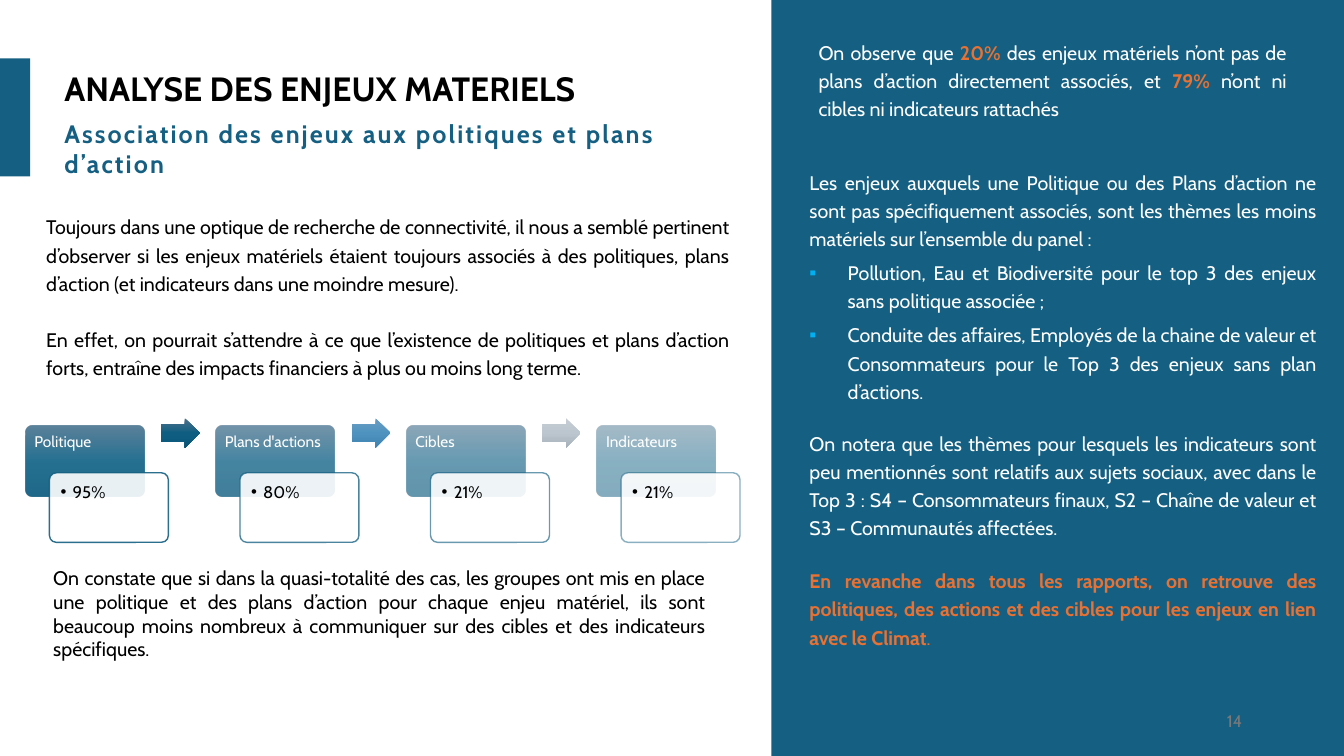
from dataclasses import dataclass

from lxml import etree
from pptx import Presentation
from pptx.dml.color import RGBColor
from pptx.enum import shapes, text
from pptx.oxml.ns import qn
from pptx.util import Inches, Pt


@dataclass(frozen=True)
class Theme:
    font: str = "Cabin"
    blue: str = "156082"
    black: str = "000000"
    white: str = "FFFFFF"
    orange: str = "E97132"
    cyan: str = "00B0F0"
    gray: str = "797979"
    card: tuple = ("4C7591", "106287", "09597D")
    arrows: tuple = (
        ("4C718C", "0F5E81", "095578"),
        ("6B9DC2", "4E93C0", "3F83B0"),
        ("C6CDD4", "BCC6CE", "A6B0B8"),
    )
    title: int = 24
    head: int = 18
    body: int = 14
    small: int = 12
    label: int = 11


theme = Theme()
SHAPE = shapes.MSO_SHAPE
LEFT, RIGHT, JUST = text.PP_ALIGN.LEFT, text.PP_ALIGN.RIGHT, text.PP_ALIGN.JUSTIFY

deck = Presentation()
deck.slide_width, deck.slide_height = Inches(13.33), Inches(7.5)
slide = deck.slides.add_slide(deck.slide_layouts[6])


def draw(kind, at, fill, alpha=100, line=None, adjust=()):
    """Add a preset shape; fill is one colour or three gradient colours."""
    shape = slide.shapes.add_shape(kind, *map(Inches, at))
    shape.shadow.inherit = False
    for i, value in enumerate(adjust):
        shape.adjustments[i] = value
    props = shape._element.spPr
    if isinstance(fill, str):
        shape.fill.solid()
        shape.fill.fore_color.rgb = RGBColor.from_string(fill)
    else:
        shape.fill.gradient()
        shape.fill.gradient_angle = 270
        stops = props.find(".//" + qn("a:gsLst"))
        for old in list(stops):
            stops.remove(old)
        for i, color in enumerate(fill):
            stop = etree.SubElement(stops, qn("a:gs"), pos=str(i * 50000))
            etree.SubElement(stop, qn("a:srgbClr"), val=color)
    if alpha < 100:
        for color in props.iter(qn("a:srgbClr")):
            etree.SubElement(color, qn("a:alpha"), val=str(alpha * 1000))
    if line:
        shape.line.color.rgb = RGBColor.from_string(theme.blue)
        shape.line.width = Pt(1)
        color = props.find(qn("a:ln")).find(".//" + qn("a:srgbClr"))
        etree.SubElement(color, qn("a:alpha"), val=str(line * 1000))
    else:
        shape.line.fill.background()
    return shape


def write(box, paras, size, color, align=LEFT, space=1.0, pad=(0.1, 0.05),
          anchor=text.MSO_ANCHOR.TOP, bold=False, track=0):
    """Fill a box; a paragraph is (runs, before, after, bullet),
    a run is (words, color, bold), a bullet is (mark, indent, color)."""
    frame = box.text_frame
    frame.word_wrap = True
    frame.vertical_anchor = anchor
    frame.margin_left = frame.margin_right = Inches(pad[0])
    frame.margin_top = frame.margin_bottom = Inches(pad[1])
    for i, (runs, before, after, bullet) in enumerate(paras):
        para = frame.add_paragraph() if i else frame.paragraphs[0]
        para.alignment = align
        para.line_spacing = space
        para.space_before, para.space_after = Pt(before), Pt(after)
        if bullet:
            mark, indent, tint = bullet
            props = para._p.get_or_add_pPr()
            props.set("marL", str(Inches(indent)))
            props.set("indent", str(-Inches(indent)))
            hue = etree.SubElement(props, qn("a:buClr"))
            etree.SubElement(hue, qn("a:srgbClr"), val=tint)
            etree.SubElement(props, qn("a:buFont"), typeface="Arial")
            etree.SubElement(props, qn("a:buChar"), char=mark)
        for words, *style in runs:
            run = para.add_run()
            run.text = words
            run.font.name, run.font.size = theme.font, Pt(size)
            run.font.bold = style[1] if style else bold
            run.font.color.rgb = RGBColor.from_string(style[0] if style else color)
            if track:
                run._r.get_or_add_rPr().set("spc", str(track))


# Side bar and right panel
draw(SHAPE.RECTANGLE, (0, 0.58, 0.3, 1.17), theme.blue)
draw(SHAPE.RECTANGLE, (7.65, 0, 5.68, 7.5), theme.blue)

# Policy, plan, target and indicator cards
cards = [("Politique", "95%", 90), ("Plans d'actions", "80%", 77),
         ("Cibles", "21%", 63), ("Indicateurs", "21%", 50)]
for i, (name, share, alpha) in enumerate(cards):
    x = 0.25 + i * 1.89
    card = draw(SHAPE.ROUNDED_RECTANGLE, (x, 4.22, 1.18, 0.71), theme.card,
                alpha, adjust=[0.1])
    write(card, [([(name,)], 0, 0, None)], theme.label, theme.white,
          space=0.9, pad=(0.07, 0.07))
    value = draw(SHAPE.ROUNDED_RECTANGLE, (x + 0.24, 4.69, 1.18, 0.69),
                 theme.white, 90, line=alpha, adjust=[0.1])
    write(value, [([(share,)], 0, 0, ("•", 0.12, theme.black))], theme.small,
          theme.black, space=0.9, pad=(0.09, 0.09))
    if i < len(theme.arrows):
        draw(SHAPE.RIGHT_ARROW, (x + 1.35, 4.15, 0.38, 0.29), theme.arrows[i],
             adjust=[0.6, 0.5])

# Text blocks: place, paragraphs, size, colour, options
white, orange = theme.white, theme.orange
square = ("▪", 0.38, theme.cyan)
prose = dict(align=JUST, space=1.2)
blocks = [
    ((0.54, 0.62, 6.01, 0.5), [([("ANALYSE DES ENJEUX MATERIELS",)], 0, 0, None)],
     theme.title, theme.black, dict(bold=True)),
    ((0.54, 1.12, 6.8, 0.71),
     [([("Association des enjeux aux politiques et plans d’action",)], 0, 0, None)],
     theme.head, theme.blue, dict(bold=True, track=150)),
    ((0.36, 2.04, 6.98, 1.78), [
        ([("Toujours dans une optique de recherche de connectivité, il nous a semblé "
           "pertinent d’observer si les enjeux matériels étaient toujours associés à des "
           "politiques, plans d’action (et indicateurs dans une moindre mesure).",)],
         0, 0, None),
        ([("En effet, on pourrait s’attendre à ce que l’existence de politiques et plans "
           "d’action forts, entraîne des impacts financiers à plus ou moins long terme.",)],
         20, 0, None),
    ], theme.body, theme.black, prose),
    ((0.43, 5.57, 6.67, 1.04), [
        ([("On constate que si dans la quasi-totalité des cas, les groupes ont mis en place "
           "une politique et des plans d’action pour chaque enjeu matériel, ils sont "
           "beaucoup moins nombreux à communiquer sur des cibles et des indicateurs "
           "spécifiques.",)], 0, 0, None),
    ], theme.body, theme.black, dict(align=JUST)),
    ((8.02, 0.31, 4.84, 0.93), [
        ([("On observe que ",), ("20%", orange, True),
          (" des enjeux matériels n’ont pas de plans d’action directement associés, et ",),
          ("79% ", orange, True),
          ("n’ont ni cibles ni indicateurs rattachés",)], 0, 0, None),
    ], theme.body, white, prose),
    ((7.93, 1.6, 5.23, 4.92), [
        ([("Les enjeux auxquels une Politique ou des Plans d’action ne sont pas "
           "spécifiquement associés, sont les thèmes les moins matériels sur l’ensemble "
           "du panel :",)], 0, 4, None),
        ([("Pollution, Eau et Biodiversité pour le top 3 des enjeux sans politique "
           "associée ;",)], 0, 4, square),
        ([("Conduite des affaires, Employés de la chaine de valeur et Consommateurs pour "
           "le Top 3 des enjeux sans plan d’actions.",)], 0, 0, square),
        ([("On notera que les thèmes pour lesquels les indicateurs sont peu mentionnés "
           "sont relatifs aux sujets sociaux, avec dans le Top 3 : S4 – Consommateurs "
           "finaux, S2 – Chaîne de valeur et S3 – Communautés affectées.",)], 17, 0, None),
        ([("En revanche dans tous les rapports, on retrouve des politiques, des actions et "
           "des cibles pour les enjeux en lien avec le Climat", orange, True),
          (".", orange, False)], 17.5, 0, None),
    ], theme.body, white, prose),
    ((9.42, 6.95, 3, 0.4), [([("14",)], 0, 0, None)], theme.small, theme.gray,
     dict(align=RIGHT, anchor=text.MSO_ANCHOR.MIDDLE)),
]
for at, paras, size, color, options in blocks:
    box = slide.shapes.add_textbox(*map(Inches, at))
    write(box, paras, size, color, **options)

deck.save("out.pptx")
